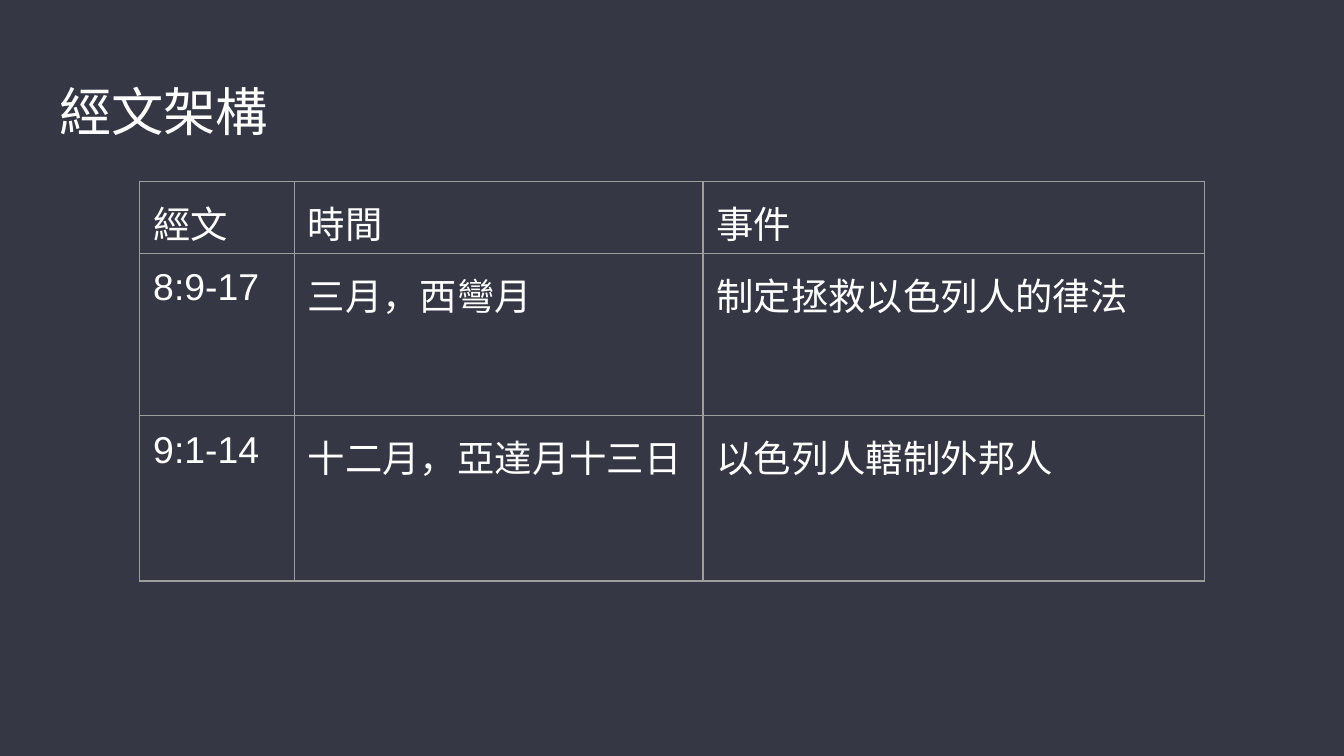
from dataclasses import dataclass

from lxml.etree import SubElement
from pptx import Presentation
from pptx.dml.color import RGBColor
from pptx.enum.text import MSO_ANCHOR
from pptx.oxml.ns import qn
from pptx.util import Inches, Pt


@dataclass(frozen=True)
class Theme:
    background: str = "353744"
    text: str = "FFFFFF"
    border: str = "9E9E9E"
    border_width: float = 0.75
    title_font: str = "Lato"
    body_font: str = "Arial"
    title_size: int = 28
    body_size: int = 20
    inset: float = 0.1
    grid: float = 0.1


class SlideBuilder:
    """Draws themed elements on a slide, placed in grid columns and rows."""

    def __init__(self, presentation, theme):
        self.theme = theme
        self.slide = presentation.slides.add_slide(presentation.slide_layouts[6])
        fill = self.slide.background.fill
        fill.solid()
        fill.fore_color.rgb = RGBColor.from_string(theme.background)

    def length(self, cells):
        return Inches(cells * self.theme.grid)

    def format_text(self, text_frame, font_name, size):
        for paragraph in text_frame.paragraphs:
            for run in paragraph.runs:
                run.font.name = font_name
                run.font.size = Pt(size)
                run.font.color.rgb = RGBColor.from_string(self.theme.text)

    def set_margins(self, holder):
        for side in ("left", "right", "top", "bottom"):
            setattr(holder, f"margin_{side}", Inches(self.theme.inset))

    def title(self, text, column, row, width, height):
        box = self.slide.shapes.add_textbox(*map(self.length, (column, row, width, height)))
        text_frame = box.text_frame
        text_frame.word_wrap = True
        text_frame.vertical_anchor = MSO_ANCHOR.TOP
        self.set_margins(text_frame)
        text_frame.text = text
        self.format_text(text_frame, self.theme.title_font, self.theme.title_size)
        for run in text_frame.paragraphs[0].runs:
            SubElement(run.font._element, qn("a:ea"), typeface=self.theme.title_font)

    def border_cell(self, cell):
        properties = cell._tc.get_or_add_tcPr()
        for position, edge in enumerate(("lnL", "lnR", "lnT", "lnB")):
            line = SubElement(properties, qn(f"a:{edge}"), w=str(Pt(self.theme.border_width)))
            fill = SubElement(line, qn("a:solidFill"))
            SubElement(fill, qn("a:srgbClr"), val=self.theme.border)
            properties.insert(position, line)

    def table(self, records, column, row, widths, heights):
        bounds = (column, row, sum(widths), sum(heights))
        frame = self.slide.shapes.add_table(
            len(heights), len(widths), *map(self.length, bounds)
        )
        table = frame.table
        table.first_row = table.horz_banding = False
        for table_column, width in zip(table.columns, widths):
            table_column.width = self.length(width)
        for table_row, height, record in zip(table.rows, heights, records):
            table_row.height = self.length(height)
            for cell, text in zip(table_row.cells, record):
                cell.text_frame.text = text
                self.format_text(cell.text_frame, self.theme.body_font, self.theme.body_size)
                self.set_margins(cell)
                cell.fill.background()
                self.border_cell(cell)


def main():
    presentation = Presentation()
    presentation.slide_width = Inches(10)
    presentation.slide_height = presentation.slide_width * 9 // 16
    builder = SlideBuilder(presentation, Theme())
    builder.title("經文架構", 3.41, 4.9, 93.2, 6.3)
    builder.table(
        [
            ("經文", "時間", "事件"),
            ("8:9-17", "三月，西彎月", "制定拯救以色列人的律法"),
            ("9:1-14", "十二月，亞達月十三日", "以色列人轄制外邦人"),
        ],
        column=10.4,
        row=13.5,
        widths=(11.5, 30.4, 37.3),
        heights=(5.1, 12.1, 12.3),
    )
    presentation.save("out.pptx")


if __name__ == "__main__":
    main()
